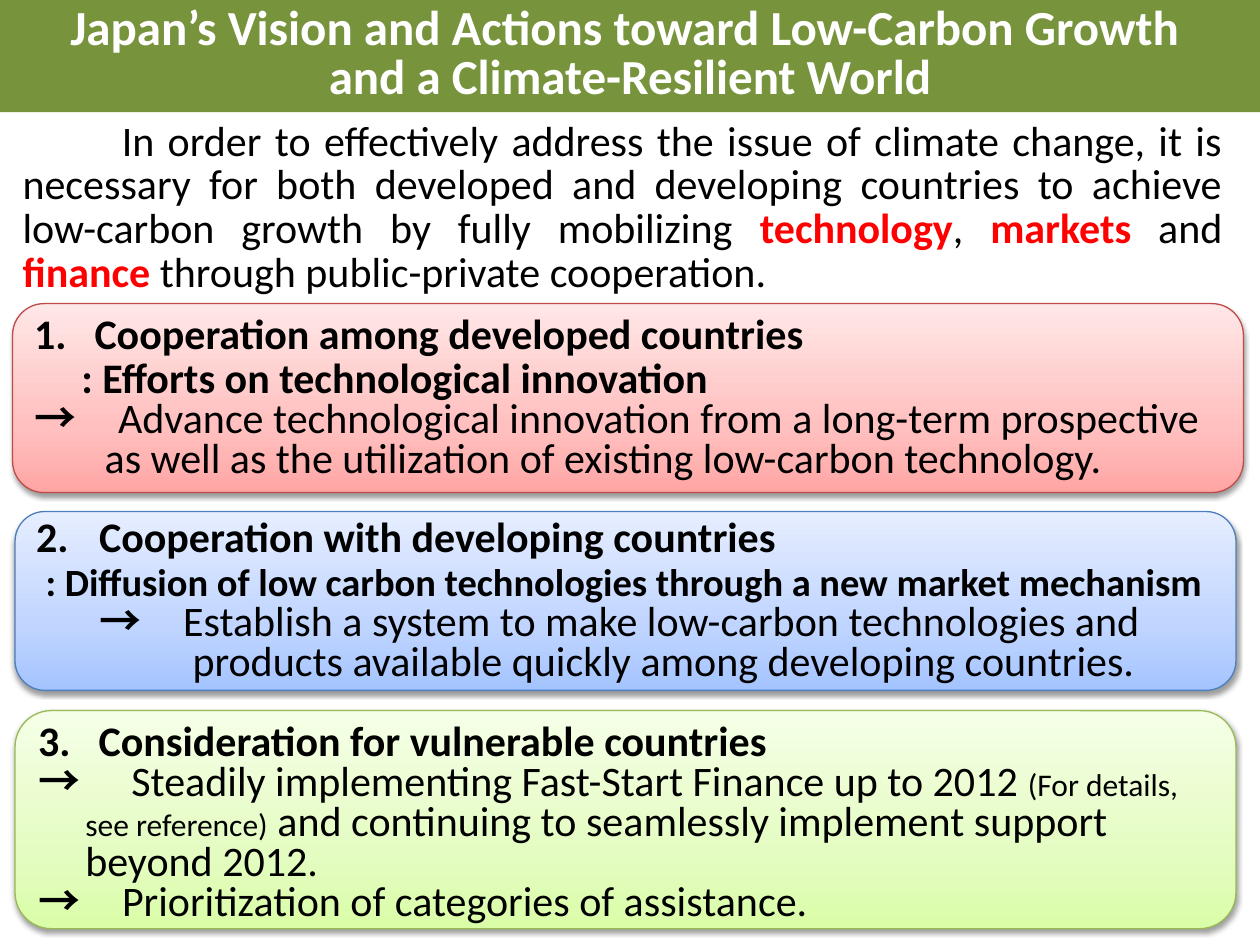
from copy import deepcopy
from dataclasses import dataclass
from lxml.etree import SubElement
from pptx import Presentation
from pptx.dml.color import RGBColor
from pptx.enum.shapes import MSO_SHAPE
from pptx.enum.text import MSO_ANCHOR, PP_ALIGN
from pptx.oxml.ns import qn
from pptx.util import Pt


@dataclass(frozen=True)
class Theme:
    font: str = "Calibri"
    ink: str = "000000"
    white: str = "FFFFFF"
    red: str = "FF0000"
    band: str = "77933C"
    head: int = 28
    body: int = 24
    sub: int = 22
    note: int = 18


T = Theme()
KEY = dict(bold=True, color=T.red)
BOLD = dict(bold=True)

# A paragraph is (runs, format); a run is (text, format).
TITLE = [
    ([("Japan’s Vision and Actions toward Low-Carbon Growth ", {})], {}),
    ([("and a Climate-Resilient World", {})], {}),
]
INTRO = [
    ([("In order to effectively address the issue of climate change, it is "
       "necessary for both developed and developing countries to achieve "
       "low-carbon growth by fully mobilizing ", {}),
      ("technology", KEY), (", ", {}), ("markets", KEY), (" and ", {}),
      ("finance", KEY),
      (" through public-private cooperation.", {})], dict(first=56.7)),
]
ARROW = ("→　", BOLD)
PANELS = [
    dict(box=(7.2, 173.5, 703.4, 108), line="BF4C48",
         stops=("FFA6A5", "FFC0BF", "FFE7E7"),
         text=[
             ([("1.\tCooperation among developed countries", BOLD)],
              dict(left=34.5, first=-34.5, lead=25)),
             ([(": Efforts on technological innovation", BOLD)],
              dict(left=27, lead=25)),
             ([ARROW,
               ("Advance technological innovation from a long-term "
                "prospective as well as the utilization of existing "
                "low-carbon technology.", {})],
              dict(left=40.3, first=-40.3)),
         ]),
    dict(box=(8.6, 292.3, 697.7, 102.2), line="4B7EBC",
         stops=("A4C4FF", "BFD4FF", "E6EEFF"),
         text=[
             ([("Cooperation with developing countries", BOLD)],
              dict(left=36, first=-36, lead=25, start=2)),
             ([(": Diffusion of low carbon technologies through a new "
                "market mechanism", dict(bold=True, size=T.sub))],
              dict(left=5.4, lead=25)),
             ([ARROW, ("Establish a system to make low-carbon technologies "
                       "and", {})], dict(left=36)),
             ([("products available quickly among developing countries.",
                {})], dict(left=89.4)),
         ]),
    dict(box=(8.6, 406.1, 697.7, 124.6), line="98B955",
         stops=("DAFDA7", "E4FCC2", "F5FFE7"),
         text=[
             ([("3.\tConsideration for vulnerable countries", BOLD)],
              dict(left=34.6, first=-34.6, lead=None)),
             ([ARROW,
               (" Steadily implementing Fast-Start Finance up to 2012 ", {}),
               ("(For details, see reference)", dict(size=T.note)),
               (" and continuing to seamlessly implement support beyond "
                "2012.", {})], dict(left=27, first=-27)),
             ([ARROW, ("Prioritization of categories of assistance.", {})],
              dict(left=27, first=-27)),
         ]),
]


def tint(code):
    return RGBColor.from_string(code)


def write(shape, paras, size=T.body, color=T.ink, bold=False, lead=23,
          align=PP_ALIGN.LEFT, anchor=MSO_ANCHOR.TOP):
    """Fill a shape with paragraphs; their own formats override these."""
    frame = shape.text_frame
    frame.word_wrap = True
    frame.vertical_anchor = anchor
    for i, (runs, form) in enumerate(paras):
        para = frame.add_paragraph() if i else frame.paragraphs[0]
        para.alignment = align
        gap = form.get("lead", lead)
        if gap:
            para.line_spacing = Pt(gap)
        props = para._p.get_or_add_pPr()
        props.set("marL", str(Pt(form.get("left", 0))))
        props.set("indent", str(Pt(form.get("first", 0))))
        if "start" in form:
            SubElement(props, qn("a:buAutoNum"), type="arabicPeriod",
                       startAt=str(form["start"]))
        for text, look in runs:
            run = para.add_run()
            run.text = text
            font = run.font
            font.name = T.font
            font.size = Pt(look.get("size", size))
            font.bold = look.get("bold", bold)
            font.color.rgb = tint(look.get("color", color))


def shade(shape, codes):
    """Three-stop gradient that runs from the bottom edge up."""
    fill = shape.fill
    fill.gradient()
    fill.gradient_angle = 90
    stops = shape._element.spPr.find(".//" + qn("a:gsLst"))
    stops.insert(1, deepcopy(stops[0]))
    for stop, code, place in zip(fill.gradient_stops, codes, (0, 0.35, 1)):
        stop.color.rgb = tint(code)
        stop.position = place


def drop(shape):
    """Soft shadow straight below the shape."""
    shape.shadow.inherit = False
    effects = shape._element.spPr.find(qn("a:effectLst"))
    outer = SubElement(effects, qn("a:outerShdw"), blurRad=str(Pt(3.1)),
                       dist=str(Pt(1.6)), dir="5400000", rotWithShape="0")
    color = SubElement(outer, qn("a:srgbClr"), val=T.ink)
    SubElement(color, qn("a:alpha"), val="38000")


def main():
    deck = Presentation()
    deck.slide_width, deck.slide_height = Pt(720), Pt(540)
    shapes = deck.slides.add_slide(deck.slide_layouts[6]).shapes

    for panel in PANELS:
        card = shapes.add_shape(MSO_SHAPE.ROUNDED_RECTANGLE,
                                *map(Pt, panel["box"]))
        shade(card, panel["stops"])
        card.line.color.rgb = tint(panel["line"])
        card.line.width = Pt(0.75)
        drop(card)
        write(card, panel["text"], anchor=MSO_ANCHOR.MIDDLE)

    intro = shapes.add_textbox(*map(Pt, (5.8, 65.5, 699.8, 108.7)))
    write(intro, INTRO, lead=25, align=PP_ALIGN.JUSTIFY)

    band = shapes.add_shape(MSO_SHAPE.RECTANGLE, *map(Pt, (0, 0, 720, 64.1)))
    band.fill.solid()
    band.fill.fore_color.rgb = tint(T.band)
    band.line.fill.background()
    band.shadow.inherit = False
    write(band, TITLE, size=T.head, color=T.white, bold=True, lead=28,
          align=PP_ALIGN.CENTER)

    deck.save("out.pptx")


if __name__ == "__main__":
    main()
